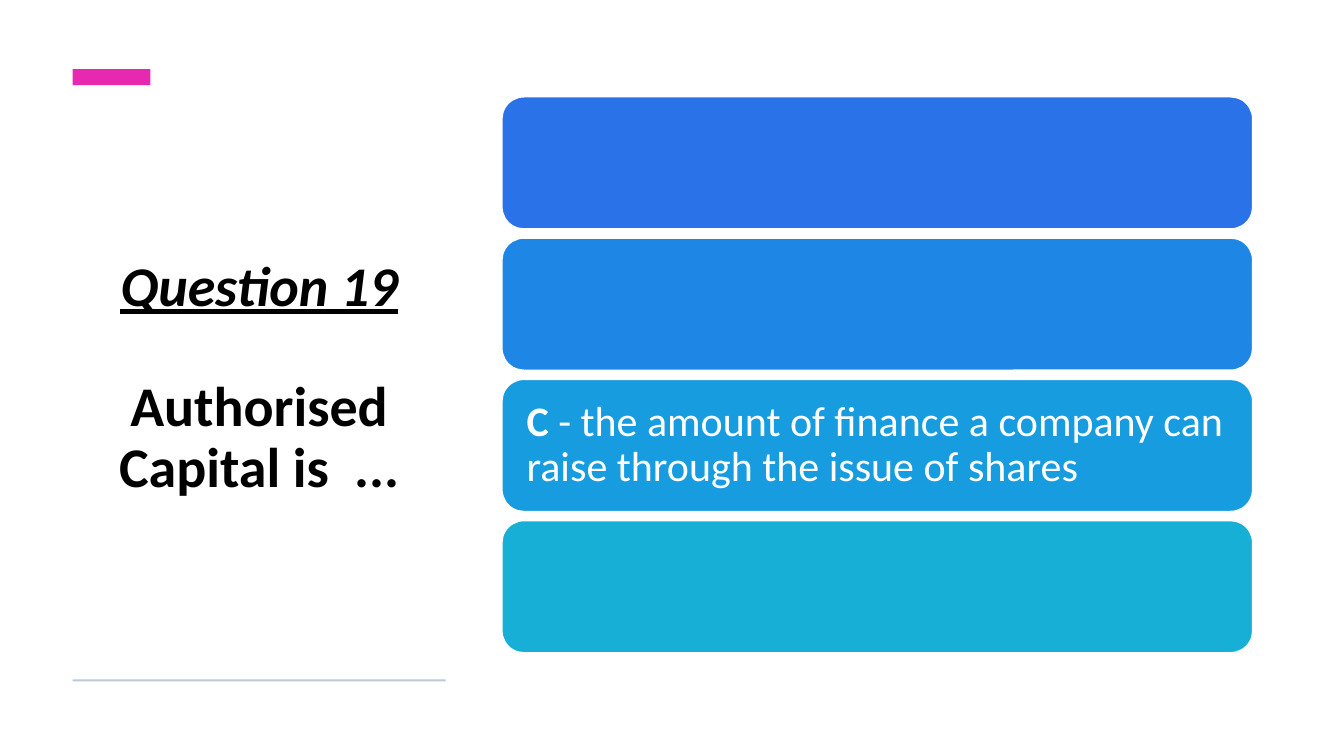
import pptx
import pptx.dml.color
import pptx.enum.shapes
import pptx.enum.text
import pptx.util

Cm = pptx.util.Cm
Pt = pptx.util.Pt
RGBColor = pptx.dml.color.RGBColor
Kind = pptx.enum.shapes.MSO_SHAPE
Align = pptx.enum.text.PP_ALIGN

BLACK = RGBColor(0x00, 0x00, 0x00)
WHITE = RGBColor(0xFF, 0xFF, 0xFF)
PINK = RGBColor(0xE7, 0x29, 0xB1)
GREY = RGBColor(0xBD, 0xC8, 0xDB)
BLUES = [
    RGBColor(0x29, 0x72, 0xE7),
    RGBColor(0x1E, 0x87, 0xE6),
    RGBColor(0x18, 0x9C, 0xE0),
    RGBColor(0x17, 0xAF, 0xD5),
]
LEFT = Cm(1.83)
WIDE = Cm(9.4)


def write(para, text, size=30, color=WHITE, bold=False, slant=False,
          under=False, align=Align.LEFT, after=0):
    para.alignment = align
    para.line_spacing = 0.9
    para.space_before = Pt(0)
    para.space_after = Pt(after)
    run = para.add_run()
    run.text = text
    font = run.font
    font.name = "Calibri"
    font.size = Pt(size)
    font.color.rgb = color
    font.bold = bold
    font.italic = slant
    font.underline = under


def block(slide, kind, left, top, width, height, fill, edge=None):
    shape = slide.shapes.add_shape(kind, left, top, width, height)
    shape.shadow.inherit = False
    shape.fill.solid()
    shape.fill.fore_color.rgb = fill
    if edge is None:
        shape.line.fill.background()
    else:
        shape.line.color.rgb = edge
        shape.line.width = Pt(1)
    return shape


def set_frame(frame, inset):
    frame.word_wrap = True
    frame.auto_size = pptx.enum.text.MSO_AUTO_SIZE.NONE
    frame.vertical_anchor = pptx.enum.text.MSO_ANCHOR.MIDDLE
    frame.margin_left = frame.margin_right = inset


def add_title(slide):
    title = slide.shapes.title
    title.left, title.top = LEFT, Cm(2.67)
    title.width, title.height = WIDE, Cm(13.74)
    frame = title.text_frame
    set_frame(frame, Cm(0.25))
    look = dict(size=40, color=BLACK, bold=True, align=Align.CENTER)
    write(frame.paragraphs[0], "Question 19", slant=True, under=True,
          after=43, **look)
    write(frame.add_paragraph(), "Authorised Capital is  ...", **look)


def add_bars(slide):
    bars = [
        block(slide, Kind.ROUNDED_RECTANGLE, Cm(12.65), Cm(2.44 + 3.56 * i),
              Cm(18.92), Cm(3.33), fill, WHITE)
        for i, fill in enumerate(BLUES)
    ]
    frame = bars[2].text_frame
    set_frame(frame, Cm(0.46))
    para = frame.paragraphs[0]
    write(para, "C ", bold=True)
    write(para, "- the amount of finance a company can raise "
                "through the issue of shares")


def main():
    deck = pptx.Presentation()
    deck.slide_width = Cm(33.87)
    deck.slide_height = Cm(19.05)
    slide = deck.slides.add_slide(deck.slide_layouts[5])
    add_title(slide)
    block(slide, Kind.RECTANGLE, LEFT, Cm(1.74), Cm(1.96), Cm(0.41), PINK)
    block(slide, Kind.RECTANGLE, LEFT, Cm(17.12), WIDE, Cm(0.05), GREY)
    add_bars(slide)
    deck.save("out.pptx")


if __name__ == "__main__":
    main()
